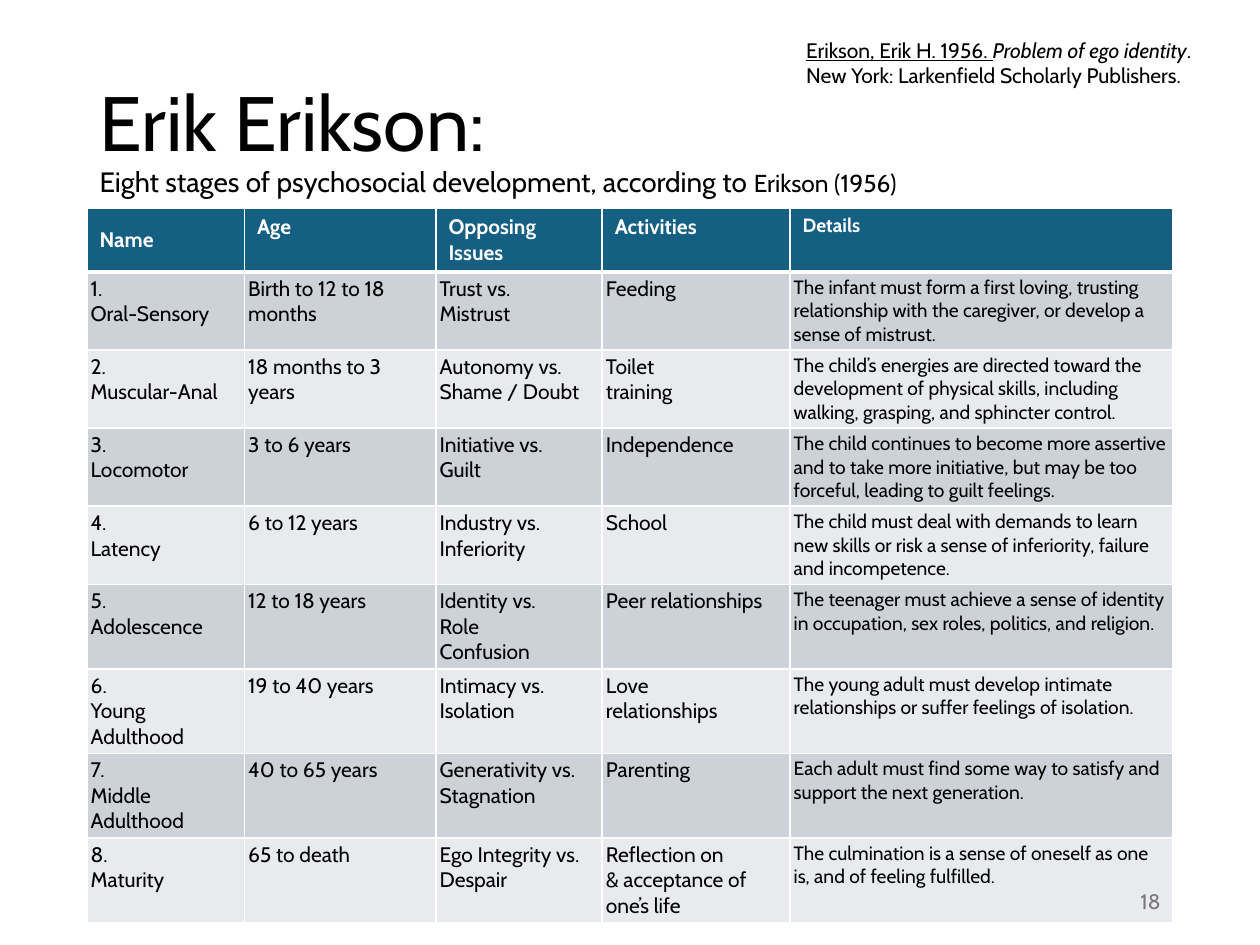
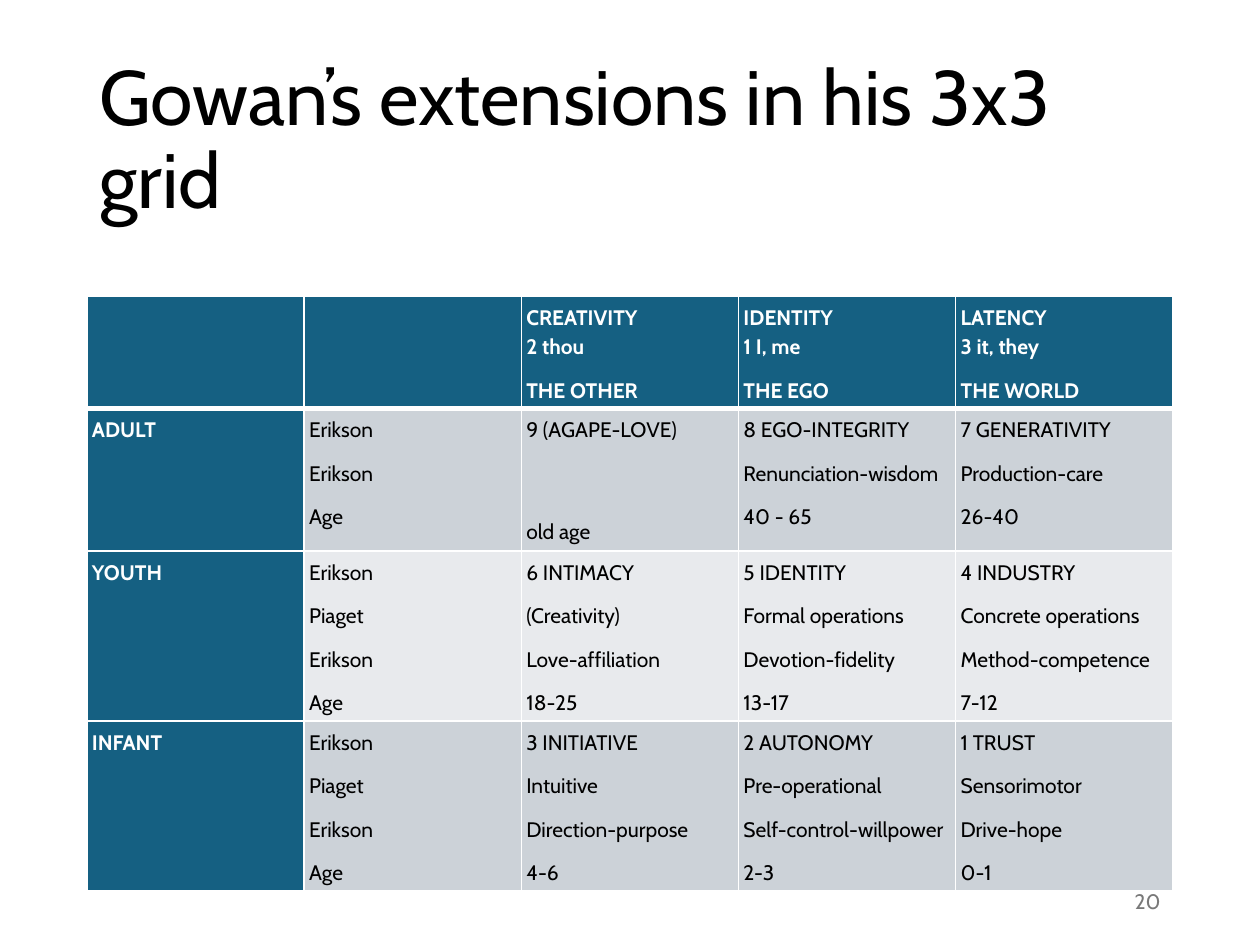
from lxml import etree
from pptx import Presentation
from pptx.dml.color import RGBColor
from pptx.enum import text
from pptx.oxml import ns
from pptx.util import Inches, Pt

FONT = "Cabin"
COLORS = {
    "ink": "000000",
    "paper": "FFFFFF",
    "header": "156082",
    "band_dark": "CCD2D8",
    "band_light": "E8EAED",
    "number": "797979",
}
TABLE_LEFT = 0.69
TABLE_WIDTH = 8.62

STAGES = [
    ["Name", "Age", "Opposing|Issues", "Activities", "Details"],
    ["1.\nOral-Sensory", "Birth to 12 to 18 months", "Trust vs.\nMistrust", "Feeding",
     "The infant must form a first loving, trusting relationship with the caregiver, "
     "or develop a sense of mistrust."],
    ["2.\nMuscular-Anal", "18 months to 3 years ", "Autonomy vs. Shame / Doubt",
     "Toilet\ntraining",
     "The child’s energies are directed toward the development of physical skills, "
     "including walking, grasping, and sphincter control."],
    ["3.\nLocomotor", "3 to 6 years", "Initiative vs.\nGuilt", "Independence",
     "The child continues to become more assertive and to take more initiative, "
     "but may be too forceful, leading to guilt feelings."],
    ["4.\nLatency", "6 to 12 years", "Industry vs.\nInferiority", "School",
     "The child must deal with demands to learn new skills or risk a sense of "
     "inferiority, failure and incompetence."],
    ["5.\nAdolescence", "12 to 18 years", "Identity vs.\nRole\nConfusion",
     "Peer relationships",
     "The teenager must achieve a sense of identity in occupation, sex roles, "
     "politics, and religion."],
    ["6.\nYoung Adulthood", "19 to 40 years", "Intimacy vs.\nIsolation",
     "Love\nrelationships",
     "The young adult must develop intimate relationships or suffer feelings of isolation."],
    ["7.\nMiddle Adulthood", "40 to 65 years", "Generativity vs. Stagnation", "Parenting",
     "Each adult must find some way to satisfy and support the next generation."],
    ["8.\nMaturity", "65 to death", "Ego Integrity vs. Despair",
     "Reflection on\n& acceptance of one’s life",
     "The culmination is a sense of oneself as one is, and of feeling fulfilled."],
]

GOWAN_GRID = [
    ["", "", "CREATIVITY\n2 thou|THE OTHER", "IDENTITY\n1 I, me|THE EGO",
     "LATENCY\n3 it, they|THE WORLD"],
    ["ADULT", "Erikson|Erikson|Age", "9 (AGAPE-LOVE)|old age",
     "8 EGO-INTEGRITY|Renunciation-wisdom|40 - 65",
     "7 GENERATIVITY|Production-care|26-40"],
    ["YOUTH", "Erikson|Piaget|Erikson|Age",
     "6 INTIMACY|(Creativity)|Love-affiliation|18-25",
     "5 IDENTITY|Formal operations|Devotion-fidelity|13-17",
     "4 INDUSTRY|Concrete operations|Method-competence|7-12"],
    ["INFANT", "Erikson|Piaget|Erikson|Age",
     "3 INITIATIVE|Intuitive|Direction-purpose|4-6",
     "2 AUTONOMY|Pre-operational|Self-control-willpower|2-3",
     "1 TRUST|Sensorimotor|Drive-hope|0-1"],
]


def apply(target, values):
    for name, value in values.items():
        setattr(target, name, value)


def rgb(color):
    return RGBColor.from_string(COLORS[color])


def add_spans(para, words, size, color="ink", **style):
    """Add words to a paragraph; a newline becomes a line break of the same size."""
    for index, line in enumerate(words.split("\n")):
        if index:
            para.add_line_break()
            line_break = para._p.findall(ns.qn("a:br"))[-1]
            etree.SubElement(line_break, ns.qn("a:rPr"), sz=str(size * 100))
        if line:
            span = para.add_run()
            span.text = line
            apply(span.font, {"name": FONT, "size": Pt(size), **style})
            span.font.color.rgb = rgb(color)


def add_title(page, parts):
    title = page.shapes.title
    apply(title, {"left": Inches(TABLE_LEFT), "top": Inches(0.4),
                  "width": Inches(TABLE_WIDTH), "height": Inches(1.45)})
    apply(title.text_frame, {"word_wrap": True,
                             "auto_size": text.MSO_AUTO_SIZE.NONE,
                             "vertical_anchor": text.MSO_ANCHOR.MIDDLE})
    para = title.text_frame.paragraphs[0]
    apply(para, {"alignment": text.PP_ALIGN.LEFT, "line_spacing": 0.9,
                 "space_before": Pt(0)})
    for words, size in parts:
        add_spans(para, words, size)


def add_text_box(page, left, top, width, height):
    frame = page.shapes.add_textbox(*map(Inches, (left, top, width, height))).text_frame
    frame.word_wrap = True
    return frame


def add_page_number(page, number):
    frame = add_text_box(page, 7.06, 6.95, 2.25, 0.4)
    frame.vertical_anchor = text.MSO_ANCHOR.MIDDLE
    para = frame.paragraphs[0]
    para.alignment = text.PP_ALIGN.RIGHT
    add_spans(para, str(number), 12, "number")


def add_reference(page):
    para = add_text_box(page, 6.3, 0.25, 3.49, 0.81).paragraphs[0]
    add_spans(para, "Erikson, Erik H. 1956. ", 12, underline=True)
    add_spans(para, "Problem of ego identity", 12, italic=True)
    add_spans(para, ".\nNew York: Larkenfield Scholarly Publishers.", 12)


def draw_borders(cell, row):
    """White cell lines, thicker between the header and the body."""
    points = {"lnL": 1, "lnR": 1, "lnT": 3 if row == 1 else 1, "lnB": 3 if row == 0 else 1}
    properties = cell._tc.get_or_add_tcPr()
    for side, width in points.items():
        line = etree.SubElement(properties, ns.qn(f"a:{side}"), w=str(Pt(width)))
        fill = etree.SubElement(line, ns.qn("a:solidFill"))
        etree.SubElement(fill, ns.qn("a:srgbClr"), val=COLORS["paper"])


def fill_cell(cell, words, size, is_header, spacing):
    frame = cell.text_frame
    for index, words_of_para in enumerate(words.split("|")):
        para = frame.paragraphs[0] if index == 0 else frame.add_paragraph()
        apply(para, spacing)
        add_spans(para, words_of_para, size, "paper" if is_header else "ink",
                  bold=is_header)


def add_grid(page, top, widths, heights, rows, inset, sizes, default_header_inset=False,
             header_column=False, spacing=None):
    frame = page.shapes.add_table(len(rows), len(widths), Inches(TABLE_LEFT), Inches(top),
                                  Inches(sum(widths)), Inches(sum(heights)))
    table = frame.table
    table.horz_banding = False
    for column, width in zip(table.columns, widths):
        column.width = Inches(width)
    for r, (row, height) in enumerate(zip(rows, heights)):
        table.rows[r].height = Inches(height)
        band = "band_dark" if r % 2 else "band_light"
        for c, words in enumerate(row):
            cell = table.cell(r, c)
            is_header = r == 0 or (header_column and c == 0)
            draw_borders(cell, r)
            cell.fill.solid()
            cell.fill.fore_color.rgb = rgb("header" if is_header else band)
            if r or not default_header_inset:
                apply(cell, {f"margin_{side}": Inches(inset)
                             for side in ("left", "right", "top", "bottom")})
            fill_cell(cell, words, sizes[c], is_header, spacing or {})
    return table


def add_erikson_page(deck):
    page = deck.slides.add_slide(deck.slide_layouts[5])
    add_title(page, [
        ("Erik Erikson:\n", 44),
        ("Eight stages of psychosocial development, according to ", 16),
        ("Erikson (1956)", 14),
    ])
    table = add_grid(page, 1.65, [1.25, 1.52, 1.32, 1.49, 3.04],
                     [0.5] + [0.62] * 4 + [0.67] * 4, STAGES, inset=0.03,
                     sizes=[12] * 4 + [11], default_header_inset=True)
    table.cell(0, 0).vertical_anchor = text.MSO_ANCHOR.MIDDLE
    add_page_number(page, 18)
    add_reference(page)


def add_gowan_page(deck):
    page = deck.slides.add_slide(deck.slide_layouts[5])
    add_title(page, [("Gowan’s extensions in his 3x3 grid", 44)])
    table = add_grid(page, 2.35, [TABLE_WIDTH / 5] * 5, [0.89, 1.13, 1.35, 1.35],
                     GOWAN_GRID, inset=0.04, sizes=[12] * 5, header_column=True,
                     spacing={"line_spacing": 1.15, "space_after": Pt(8)})
    old_age = table.cell(1, 2).text_frame.paragraphs[1]
    old_age.space_before = Pt(33.5)
    add_page_number(page, 20)


def main():
    deck = Presentation()
    apply(deck, {"slide_width": Inches(10), "slide_height": Inches(7.5)})
    add_erikson_page(deck)
    add_gowan_page(deck)
    deck.save("out.pptx")


if __name__ == "__main__":
    main()
